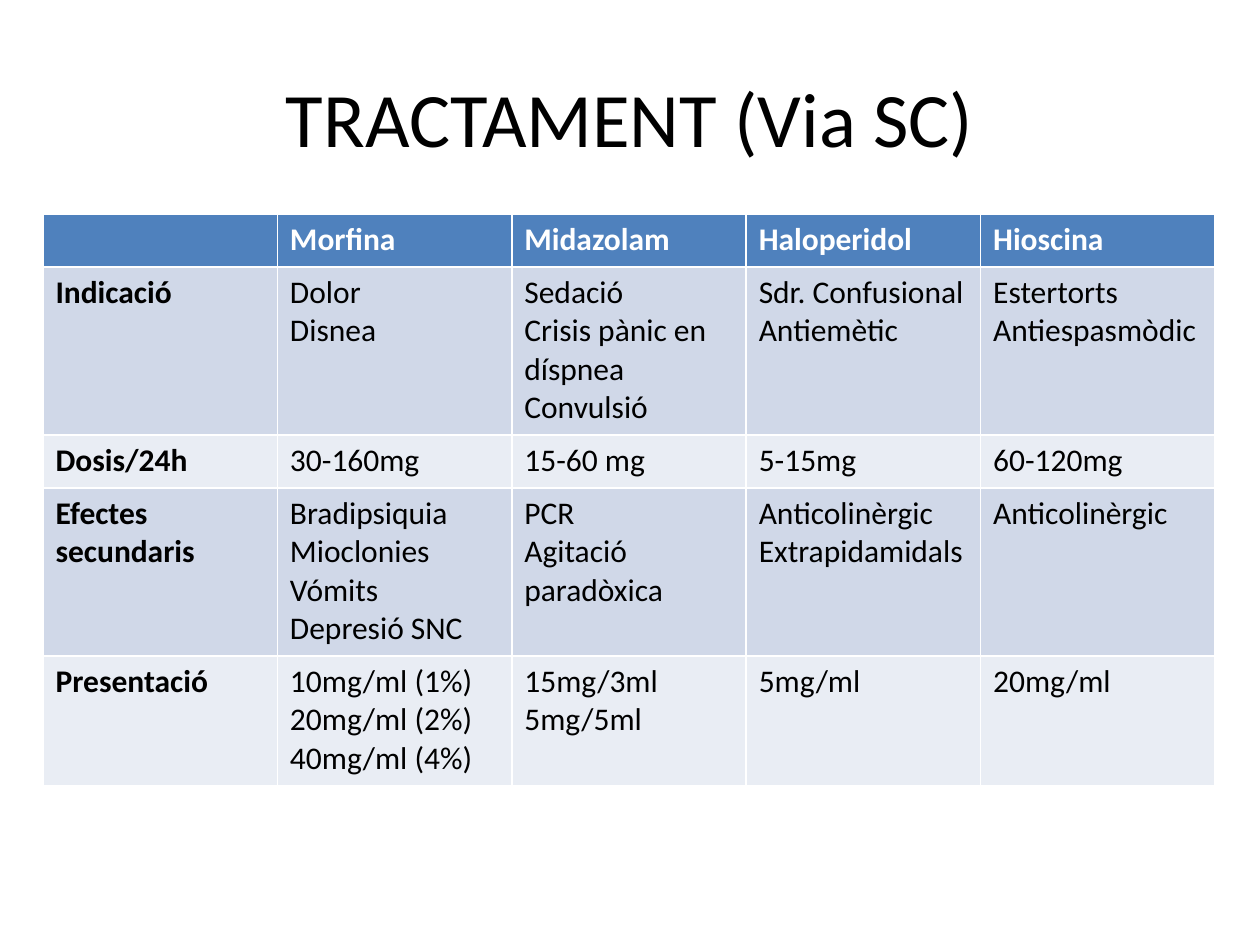
from pptx import Presentation
from pptx import util as u
from pptx.dml.color import RGBColor
from pptx.enum import text

BLACK = RGBColor(0x00, 0x00, 0x00)
WHITE = RGBColor(0xFF, 0xFF, 0xFF)
BLUE = RGBColor(0x4F, 0x81, 0xBD)
DARK = RGBColor(0xD0, 0xD8, 0xE8)
LIGHT = RGBColor(0xE9, 0xED, 0xF4)
FONT = "Calibri"


def px(n):
    return u.Emu(round(n * 914400 / 126))


def style(par, size, color, bold=False):
    font = par.font
    font.name, font.size, font.bold = FONT, u.Pt(size), bold
    font.color.rgb = color


deck = Presentation()
deck.slide_width, deck.slide_height = px(1260), px(945)
slide = deck.slides.add_slide(deck.slide_layouts[5])

# Title
title = slide.shapes.title
title.left, title.top, title.width, title.height = px(63), px(38), px(1134), px(157)
title.text_frame.text = "TRACTAMENT (Via SC)"
title.text_frame.vertical_anchor = text.MSO_ANCHOR.MIDDLE
head = title.text_frame.paragraphs[0]
head.alignment = text.PP_ALIGN.CENTER
style(head, 44, BLACK)

# Drug table: one tuple per row, line breaks separate paragraphs
rows = [
    ("", "Morfina", "Midazolam", "Haloperidol", "Hioscina"),
    ("Indicació", "Dolor\nDisnea", "Sedació\nCrisis pànic en díspnea\nConvulsió",
     "Sdr. Confusional\nAntiemètic", "Estertorts\nAntiespasmòdic"),
    ("Dosis/24h", "30-160mg", "15-60 mg", "5-15mg", "60-120mg"),
    ("Efectes secundaris", "Bradipsiquia\nMioclonies\nVómits\nDepresió SNC",
     "PCR\nAgitació paradòxica", "Anticolinèrgic\nExtrapidamidals", "Anticolinèrgic"),
    ("Presentació", "10mg/ml (1%)\n20mg/ml (2%)\n40mg/ml (4%)",
     "15mg/3ml\n5mg/5ml", "5mg/ml", "20mg/ml"),
]
tall = [53, 168, 53, 168, 130]
fills = [BLUE, DARK, LIGHT, DARK, LIGHT]

# The default table style supplies the white cell borders
table = slide.shapes.add_table(len(rows), len(rows[0]), px(43), px(214),
                               px(1172), px(sum(tall))).table
for r, row in enumerate(rows):
    table.rows[r].height = px(tall[r])
    for c, words in enumerate(row):
        cell = table.cell(r, c)
        cell.fill.solid()
        cell.fill.fore_color.rgb = fills[r]
        cell.text_frame.text = words
        for par in cell.text_frame.paragraphs:
            style(par, 18, BLACK if r else WHITE, bold=r == 0 or c == 0)

deck.save("out.pptx")
